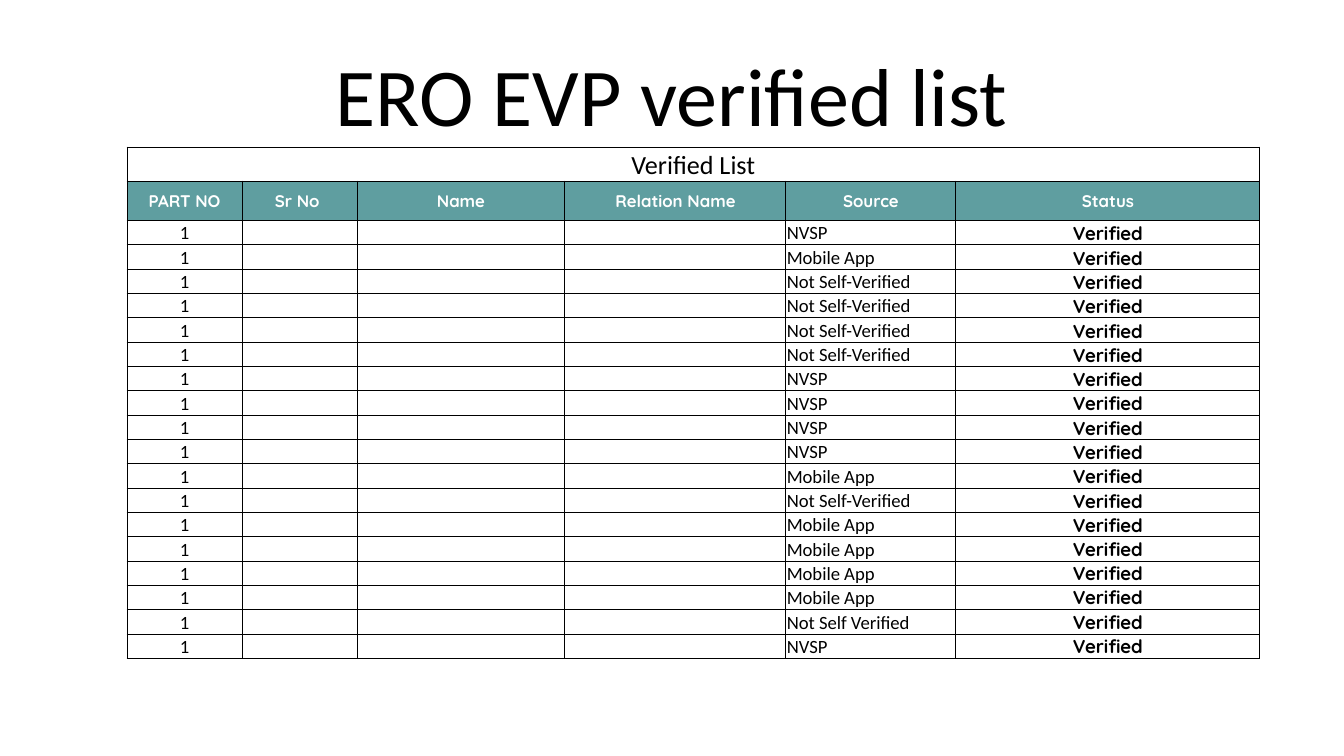
from dataclasses import dataclass

from lxml.etree import SubElement
from pptx import Presentation
from pptx.dml.color import RGBColor
from pptx.enum.text import MSO_ANCHOR, PP_ALIGN
from pptx.oxml.ns import qn
from pptx.util import Pt

SCALE = 9144000 / 1344
COLS = [115, 115, 208, 221, 170, 304]
HEADERS = ["PART NO", "Sr No ", "Name", "Relation Name", "Source", "Status"]
NVSP, APP, NOT_SELF = "NVSP", "Mobile App", "Not Self-Verified"
SOURCES = (
    [NVSP, APP] + [NOT_SELF] * 4 + [NVSP] * 4 + [APP, NOT_SELF]
    + [APP] * 4 + ["Not Self Verified", NVSP]
)
TITLE_ROW, HEADER_ROW, BODY_HEIGHT = 34, 40, 438


@dataclass(frozen=True)
class Theme:
    """Colours, fonts and type sizes of the slide."""
    ink: str = "000000"
    paper: str = "FFFFFF"
    teal: str = "5F9EA0"
    text_font: str = "Calibri"
    label_font: str = "Quicksand"
    title: int = 44
    caption: int = 14
    header: int = 9
    body: int = 10
    border: float = 0.5


THEME = Theme()


def px(n):
    """Turn pixels into EMU."""
    return round(n * SCALE)


def write(tf, text, size, font=THEME.text_font, color=THEME.ink, bold=False,
          align=PP_ALIGN.CENTER):
    """Put one formatted paragraph into a text frame."""
    p = tf.paragraphs[0]
    p.text = text
    p.alignment = align
    for r in p.runs:
        r.font.size = Pt(size)
        r.font.name = font
        r.font.bold = bold
        r.font.color.rgb = RGBColor.from_string(color)
    if not text:
        SubElement(p._p, qn("a:endParaRPr"), sz=str(size * 100))


def add_title(s, text, x, y, w, h):
    """Add the centred slide title."""
    sp = s.shapes.add_textbox(px(x), px(y), px(w), px(h))
    tf = sp.text_frame
    tf.word_wrap = True
    tf.vertical_anchor = MSO_ANCHOR.MIDDLE
    write(tf, text, THEME.title)


def set_borders(cell):
    """Draw a thin line on all four sides of a cell."""
    tcPr = cell._tc.get_or_add_tcPr()
    for side in ("lnL", "lnR", "lnT", "lnB"):
        ln = SubElement(tcPr, qn(f"a:{side}"), w=str(Pt(THEME.border)))
        fill = SubElement(ln, qn("a:solidFill"))
        SubElement(fill, qn("a:srgbClr"), val=THEME.ink)


def set_cell(cell, text, size, fill=THEME.paper, anchor=MSO_ANCHOR.BOTTOM, **style):
    """Fill, frame and write one table cell."""
    set_borders(cell)
    cell.fill.solid()
    cell.fill.fore_color.rgb = RGBColor.from_string(fill)
    cell.margin_left = cell.margin_right = cell.margin_top = px(1)
    cell.margin_bottom = 0
    cell.vertical_anchor = anchor
    write(cell.text_frame, text, size, **style)


def row_heights():
    """Share the body height evenly among the rows in whole pixels."""
    n = len(SOURCES)
    edges = [round(BODY_HEIGHT * i / n) for i in range(n + 1)]
    return [TITLE_ROW, HEADER_ROW] + [b - a for a, b in zip(edges, edges[1:])]


def add_list_table(s, x, y):
    """Add the table of verified entries."""
    heights = row_heights()
    frame = s.shapes.add_table(len(heights), len(COLS), px(x), px(y),
                               px(sum(COLS)), px(sum(heights)))
    table = frame.table
    table.first_row = table.horz_banding = False
    for col, w in zip(table.columns, COLS):
        col.width = px(w)
    for row, h in zip(table.rows, heights):
        row.height = px(h)

    for c, header in enumerate(HEADERS):
        set_cell(table.cell(0, c), "" if c else "Verified List", THEME.caption)
        set_cell(table.cell(1, c), header, THEME.header, THEME.teal,
                 MSO_ANCHOR.MIDDLE, font=THEME.label_font,
                 color=THEME.paper, bold=True)
    table.cell(0, 0).merge(table.cell(0, len(COLS) - 1))

    styles = {
        "Source": {"align": PP_ALIGN.LEFT},
        "Status": {"font": THEME.label_font, "bold": True},
    }
    for i, source in enumerate(SOURCES, 2):
        values = ["1", "", "", "", source, "Verified"]
        for c, (header, value) in enumerate(zip(HEADERS, values)):
            set_cell(table.cell(i, c), value, THEME.body, **styles.get(header, {}))


def main():
    """Build the slide and save it."""
    prs = Presentation()
    prs.slide_width, prs.slide_height = px(1344), px(756)
    s = prs.slides.add_slide(prs.slide_layouts[6])
    add_title(s, "ERO EVP verified list", 67, 31, 1210, 126)
    add_list_table(s, 127, 147)
    prs.save("out.pptx")


if __name__ == "__main__":
    main()
